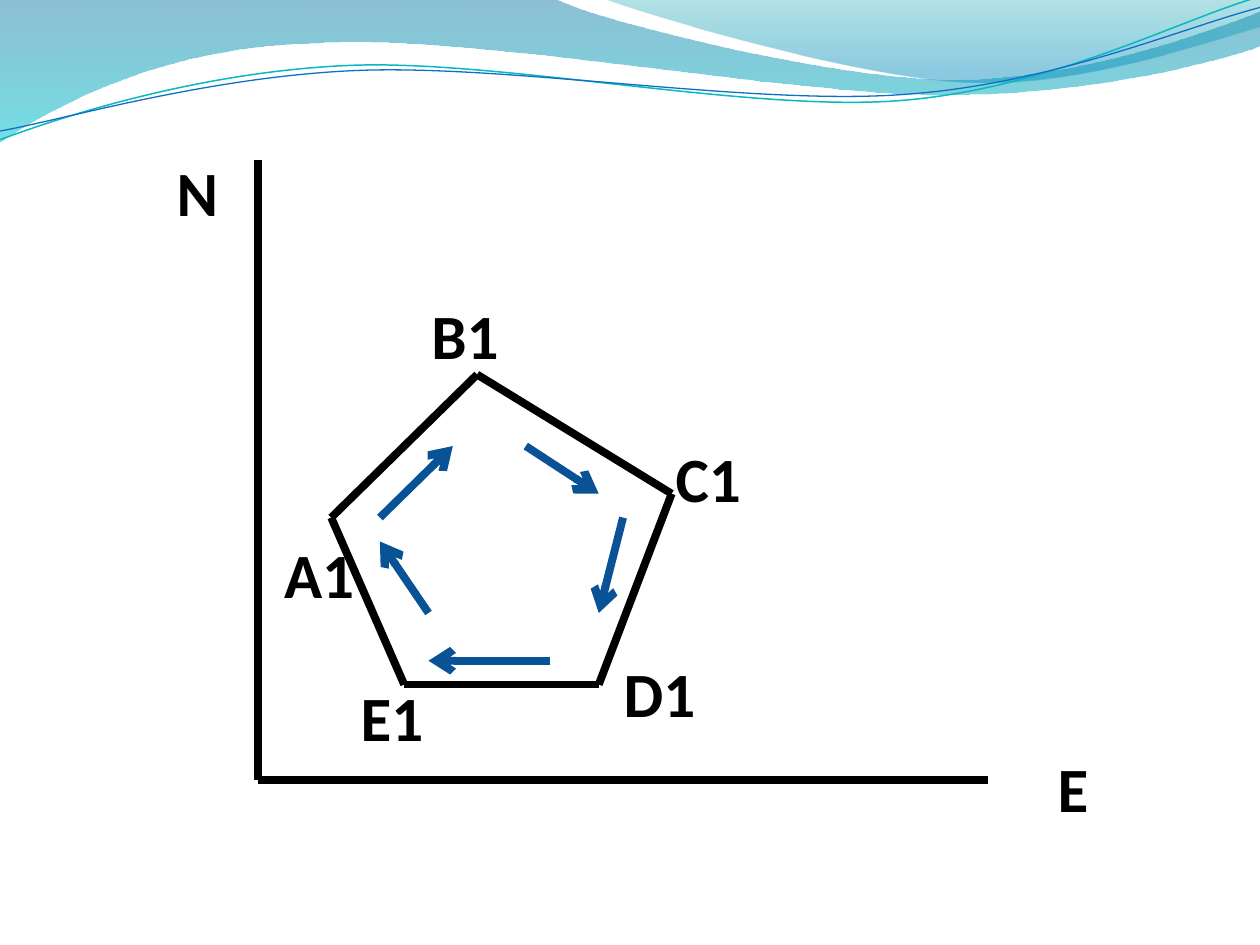
"""Draw a compass traverse on north and east axes under a wave banner."""
from math import cos, radians, sin

from lxml import etree
from pptx import Presentation
from pptx.dml.color import RGBColor
from pptx.enum.shapes import MSO_CONNECTOR
from pptx.enum.text import MSO_AUTO_SIZE, PP_ALIGN
from pptx.oxml.ns import qn
from pptx.util import Inches, Pt

STRAIGHT = MSO_CONNECTOR.STRAIGHT
CENTER = PP_ALIGN.CENTER
GROW = MSO_AUTO_SIZE.SHAPE_TO_FIT_TEXT
BLACK = RGBColor(0x00, 0x00, 0x00)
NAVY = RGBColor(0x09, 0x52, 0x95)
BLUE = RGBColor(0x0F, 0x6F, 0xC6)
TEAL = RGBColor(0x0A, 0xB8, 0xBF)
DEEP = RGBColor(0x00, 0x74, 0xA1)
AQUA = RGBColor(0x00, 0xC6, 0xCF)
SEA = RGBColor(0x00, 0xA1, 0xA9)
SKY = RGBColor(0x00, 0x8B, 0xBF)

deck = Presentation()
deck.slide_width, deck.slide_height = Inches(10), Inches(7.5)
slide = deck.slides.add_slide(deck.slide_layouts[6])
shapes = slide.shapes

LEFT, TOP = Inches(2.05), Inches(1.08)
COL, ROW = Inches(5.79) / 30, Inches(5.11) / 27
TILT = 2.7


def place(col, row):
    return round(LEFT + col * COL), round(TOP + row * ROW)


def wave(start, parts, closed):
    dots = [part[i:i + 2] for part in parts for i in range(0, len(part), 2)]
    pen = shapes.build_freeform(Inches(start[0]), Inches(start[1]))
    pen.add_line_segments([(Inches(x), Inches(y)) for x, y in dots], close=closed)
    shape = pen.convert_to_shape()
    shape.shadow.inherit = False
    lines = list(shape._element.iter(qn("a:lnTo")))
    for part in parts:
        size = len(part) // 2
        group, lines = lines[:size], lines[size:]
        if size == 3:
            bend = etree.Element(qn("a:cubicBezTo"))
            group[0].addprevious(bend)
            for line in group:
                bend.append(line[0])
                line.getparent().remove(line)
    return shape


bands = [
    ((0, 0), [(4.4, -0.01), (4.76, 0.17, 6.64, 0.63, 7.58, 0.63),
              (8.53, 0.63, 9.58, 0.26, 10, 0.09), (10.01, 0.36),
              (9.83, 0.44, 8.7, 0.76, 7.46, 0.75),
              (6.22, 0.75, 3.82, 0.28, 2.57, 0.34),
              (1.29, 0.36, 0.46, 0.83, -0.01, 1.13), (0, 0)],
     [(0, DEEP, 45), (1, AQUA, 55)]),
    ((4.79, -0.01), [(5.09, 0.11, 6.82, 0.62, 7.69, 0.65),
                     (8.56, 0.69, 9.61, 0.32, 10, 0.21), (10, 0), (4.79, -0.01)],
     [(0, SEA, 30), (0.8, SKY, 45)]),
]
for start, parts, stops in bands:
    band = wave(start, parts, True)
    band.line.fill.background()
    band.fill.gradient()
    band.fill.gradient_angle = 270
    for stop, (spot, tone, alpha) in zip(band.fill.gradient_stops, stops):
        stop.position = spot
        stop.color.rgb = tone
    for tone, (spot, name, alpha) in zip(band.fill._xPr.iter(qn("a:srgbClr")), stops):
        etree.SubElement(tone, qn("a:alpha"), val=str(alpha * 1000))

curves = [
    ((0, 1.11), [(0.48, 0.93, 1.58, 0.57, 2.77, 0.52),
                 (3.95, 0.47, 5.93, 0.89, 7.13, 0.8),
                 (8.33, 0.71, 9.38, 0.15, 9.98, -0.02)], TEAL, 0.85, 0.58),
    ((0, 1.04), [(0.47, 0.96, 1.64, 0.61, 2.83, 0.56),
                 (4.03, 0.51, 5.97, 0.84, 7.17, 0.75),
                 (8.36, 0.67, 9.41, 0.21, 10, 0.06)], BLUE, 0.75, 0.59),
]
turn = radians(TILT)
for start, parts, tone, width, mid in curves:
    level = []
    for part in [start] + parts:
        flat = []
        for x, y in zip(part[::2], part[1::2]):
            across, down = x - 5, y - mid
            flat += [5 + across * cos(turn) - down * sin(turn),
                     mid + across * sin(turn) + down * cos(turn)]
        level.append(flat)
    curve = wave(level[0], level[1:], False)
    curve.rotation = 360 - TILT
    curve.fill.background()
    curve.line.color.rgb = tone
    curve.line.width = Pt(width)

axes = [((0, 1), (0, 27)), ((0, 27), (30, 27))]
nodes = [(3, 16), (9, 10), (17, 15), (14, 23), (6, 23)]
sides = list(zip(nodes, nodes[1:] + nodes[:1]))
arrows = [((5, 16), (8, 13)), ((11, 13), (14, 15)), ((15, 16), (14, 20)),
          ((12, 22), (7, 22)), ((7, 20), (5, 17))]
for group, tone in ((axes + sides, BLACK), (arrows, NAVY)):
    for tail, head in group:
        line = shapes.add_connector(STRAIGHT, *place(*tail), *place(*head))
        line.line.color.rgb = tone
        line.line.width = Pt(4.5)
        if tone == NAVY:
            etree.SubElement(line.line._get_or_add_ln(), qn("a:tailEnd"), type="arrow")
        etree.SubElement(line._element.spPr, qn("a:effectLst"))

labels = {"N": (-5, 0), "A1": (0, 16), "B1": (6, 6), "C1": (16, 12),
          "D1": (14, 21), "E1": (3, 22), "E": (31, 25)}
for text, spot in labels.items():
    box = shapes.add_textbox(*place(*spot), round(5 * COL), Inches(0.8))
    frame = box.text_frame
    frame.word_wrap = True
    frame.auto_size = GROW
    frame.text = text
    para = frame.paragraphs[0]
    para.alignment = CENTER
    para.line_spacing = 1.15
    para.space_after = Pt(10)
    font = para.runs[0].font
    font.name, font.size, font.bold = "Calibri", Pt(36), True
    font.color.rgb = BLACK

deck.save("out.pptx")
